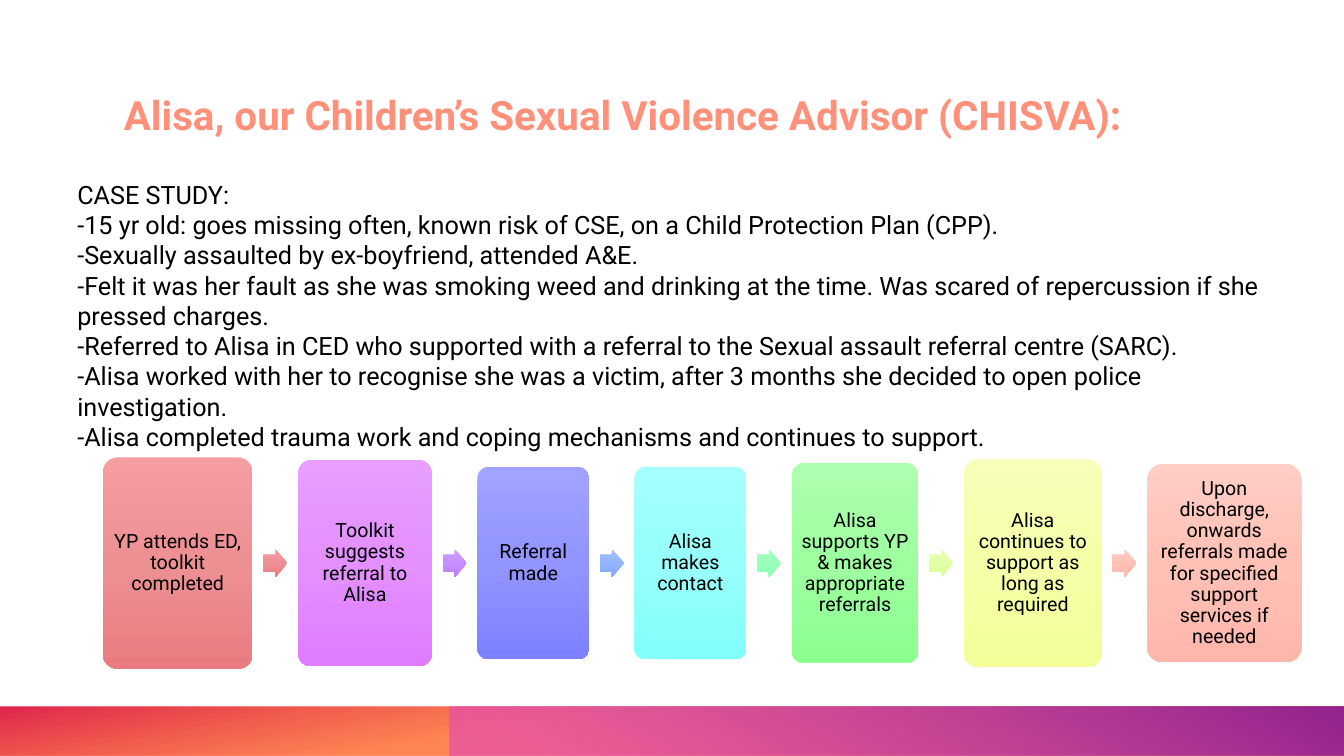
from lxml import etree
from pptx import Presentation
from pptx.dml.color import RGBColor
from pptx.enum.shapes import MSO_SHAPE
from pptx.enum.text import MSO_ANCHOR, PP_ALIGN
from pptx.oxml.ns import qn
from pptx.util import Cm, Pt

RECTANGLE = MSO_SHAPE.RECTANGLE
CARD = MSO_SHAPE.ROUNDED_RECTANGLE
ARROW = MSO_SHAPE.RIGHT_ARROW
TOP, MIDDLE, BOTTOM = MSO_ANCHOR.TOP, MSO_ANCHOR.MIDDLE, MSO_ANCHOR.BOTTOM
LEFT, CENTER = PP_ALIGN.LEFT, PP_ALIGN.CENTER

# Content
FONT = "Roboto"
TITLE = "Alisa, our Children’s Sexual Violence Advisor (CHISVA):"
CASE_STUDY = [
    "CASE STUDY:",
    "-15 yr old: goes missing often, known risk of CSE, on a Child Protection Plan (CPP).",
    "-Sexually assaulted by ex-boyfriend, attended A&E.",
    "-Felt it was her fault as she was smoking weed and drinking at the time. "
    "Was scared of repercussion if she pressed charges.",
    "-Referred to Alisa in CED who supported with a referral to the Sexual assault "
    "referral centre (SARC).",
    "-Alisa worked with her to recognise she was a victim, after 3 months she decided "
    "to open police investigation.",
    "-Alisa completed trauma work and coping mechanisms and continues to support.",
]
# Text, card width and height in cm, card colour, colour of the arrow that follows
STEPS = [
    ("YP attends ED, toolkit completed", 3.78, 5.33, "rose", "rose"),
    ("Toolkit suggests referral to Alisa", 3.38, 5.21, "violet", "lilac"),
    ("Referral made", 2.82, 4.85, "indigo", "sky"),
    ("Alisa makes contact", 2.82, 4.85, "cyan", "mint"),
    ("Alisa supports YP & makes appropriate referrals", 3.2, 5.05, "green", "lime"),
    ("Alisa continues to support as long as required", 3.48, 5.23, "yellow", "peach"),
    ("Upon discharge, onwards referrals made for specified support services if needed",
     3.89, 5.0, "peach", None),
]
COLORS = {
    "title": "FF907A", "text": "000000",
    "orange": "FE4A00", "red": "DA002F", "pink": "E349BB", "purple": "92248E",
}
# Top, middle and bottom colour of each step gradient
GRADIENTS = {
    "rose": ("F59DA1", "EC9094", "EA7C81"),
    "violet": ("E79EFF", "E490FF", "E07CFF"),
    "lilac": ("CE9EFF", "C690FF", "BF7CFF"),
    "indigo": ("A0A3FF", "9294FF", "7D81FF"),
    "sky": ("A1C0FF", "93B5FF", "7FAAFF"),
    "cyan": ("A5FFFC", "96FFFB", "83FFFB"),
    "mint": ("A9FFC5", "9AFFBA", "88FFB0"),
    "green": ("ADFFAF", "9DFF9F", "8DFF90"),
    "lime": ("E7FFB6", "E1FFA6", "DDFF97"),
    "yellow": ("F7FFB8", "F5FFA8", "F3FF9A"),
    "peach": ("FFCEC6", "FFC0B5", "FFB7AB"),
}

# Layout in cm
WIDTH, HEIGHT = 33.87, 19.05
BAR_HEIGHT, PURPLE_LEFT = 1.25, 11.32
FLOW_LEFT, FLOW_MIDDLE, STEP_GAP = 2.59, 14.19, 1.14
ARROW_WIDTH, ARROW_HEIGHT = 0.61, 0.71


def add_gradient_shape(slide, kind, box, stops, angle):
    """Stops are (position %, colour, opacity %)."""
    shape = slide.shapes.add_shape(kind, *[Cm(length) for length in box])
    shape.shadow.inherit = False
    shape.line.fill.background()
    shape.fill.gradient()
    gradient = shape._element.spPr.find(qn("a:gradFill"))
    stop_list = gradient.find(qn("a:gsLst"))
    for old_stop in list(stop_list):
        stop_list.remove(old_stop)
    for position, color, opacity in stops:
        stop = etree.SubElement(stop_list, qn("a:gs"), pos=str(position * 1000))
        rgb = etree.SubElement(stop, qn("a:srgbClr"), val=color)
        if opacity < 100:
            etree.SubElement(rgb, qn("a:alpha"), val=str(opacity * 1000))
    direction = gradient.find(qn("a:lin"))
    direction.set("ang", str(angle * 60000))
    direction.set("scaled", "0")
    return shape


def add_step_shape(slide, kind, box, color):
    stops = [(place, shade, 100) for place, shade in zip((0, 50, 100), GRADIENTS[color])]
    return add_gradient_shape(slide, kind, box, stops, 90)


def write(shape, lines, size, color, anchor=TOP, align=LEFT, spacing=1.0, bold=False):
    frame = shape.text_frame
    frame.text = "\n".join(lines)
    frame.word_wrap = True
    frame.vertical_anchor = anchor
    for paragraph in frame.paragraphs:
        paragraph.alignment = align
        paragraph.line_spacing = spacing
        font = paragraph.runs[0].font
        font.name, font.size, font.bold = FONT, Pt(size), bold
        font.color.rgb = RGBColor.from_string(COLORS[color])


def add_footer(slide):
    top = HEIGHT - BAR_HEIGHT
    warm_bar = add_gradient_shape(
        slide, RECTANGLE, (0, top, WIDTH, BAR_HEIGHT),
        [(62, COLORS["orange"], 67), (100, COLORS["red"], 85)], 100)
    warm_bar.rotation = 180
    purple_bar = add_gradient_shape(
        slide, RECTANGLE, (PURPLE_LEFT, top, WIDTH - PURPLE_LEFT, BAR_HEIGHT),
        [(9, COLORS["pink"], 62), (99, COLORS["purple"], 100)], 240)
    for bar in (warm_bar, purple_bar):
        bar._element.spPr.find(qn("a:xfrm")).set("flipH", "1")


def add_flow(slide):
    left = FLOW_LEFT
    for text, width, height, card_color, arrow_color in STEPS:
        card = add_step_shape(
            slide, CARD, (left, FLOW_MIDDLE - height / 2, width, height), card_color)
        card.adjustments[0] = 0.1
        frame = card.text_frame
        frame.margin_left = frame.margin_right = Cm(0.15)
        frame.margin_top = frame.margin_bottom = Cm(0.15)
        write(card, [text], 14, "text", MIDDLE, CENTER, 0.9)
        left += width + STEP_GAP
        if arrow_color:
            arrow_left = left - (STEP_GAP + ARROW_WIDTH) / 2
            arrow = add_step_shape(
                slide, ARROW,
                (arrow_left, FLOW_MIDDLE - ARROW_HEIGHT / 2, ARROW_WIDTH, ARROW_HEIGHT),
                arrow_color)
            arrow.adjustments[0] = 0.6
            arrow.adjustments[1] = 0.5


def main():
    presentation = Presentation()
    presentation.slide_width, presentation.slide_height = Cm(WIDTH), Cm(HEIGHT)
    slide = presentation.slides.add_slide(presentation.slide_layouts[6])

    # Footer bars
    add_footer(slide)

    # Title
    title = slide.shapes.add_textbox(Cm(2.87), Cm(0.97), Cm(27.74), Cm(2.67))
    write(title, [TITLE], 28.8, "title", BOTTOM, spacing=0.9, bold=True)

    # Support pathway
    add_flow(slide)

    # Case study
    case_study = slide.shapes.add_textbox(Cm(1.7), Cm(4.39), Cm(30.53), Cm(7.37))
    write(case_study, CASE_STUDY, 18, "text")

    presentation.save("out.pptx")


if __name__ == "__main__":
    main()
